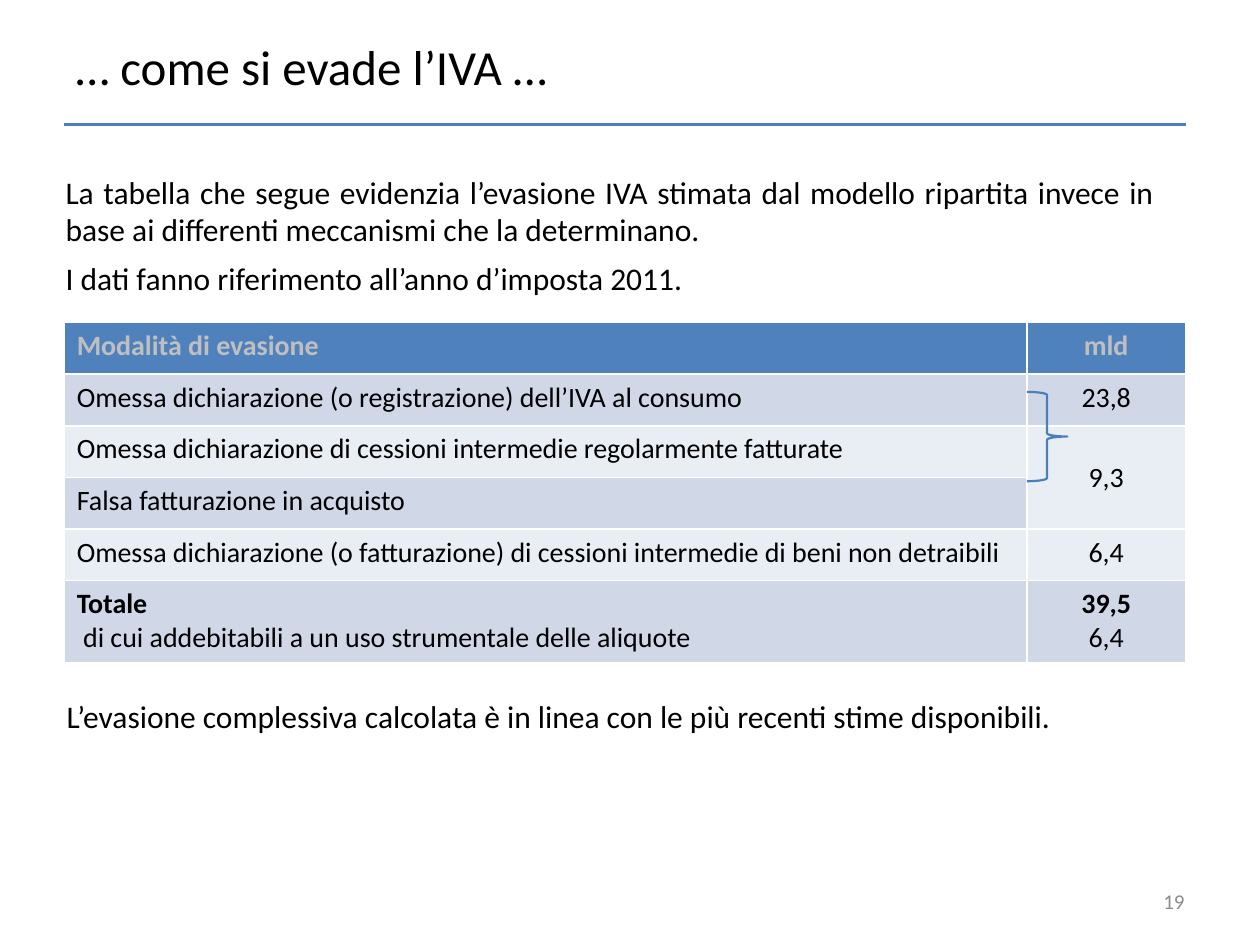
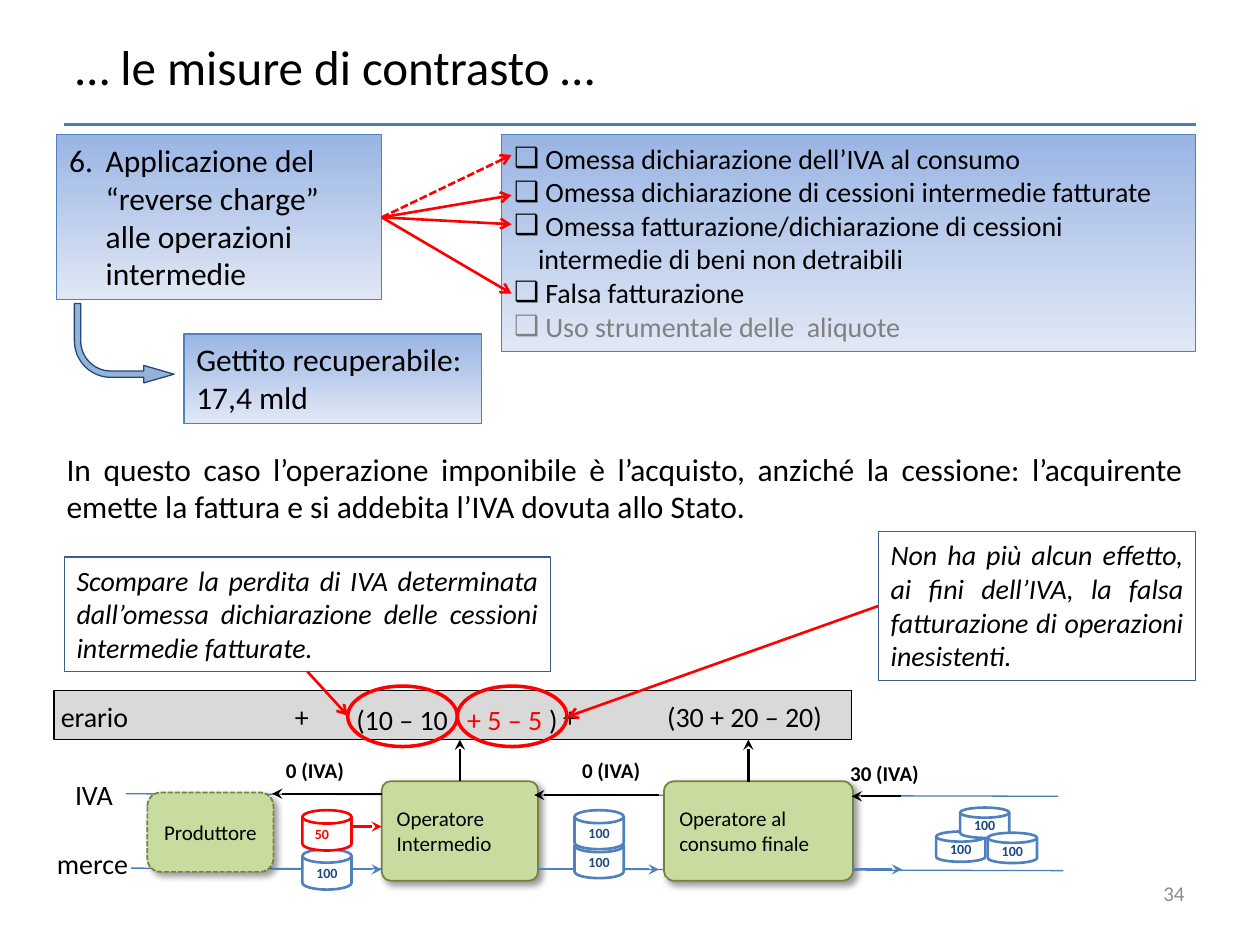
import collections

import pptx
import pptx.dml.color
import pptx.enum.dml
import pptx.enum.shapes
import pptx.enum.text
import pptx.oxml
import pptx.oxml.ns
import pptx.util

RGB = pptx.dml.color.RGBColor
KIND = pptx.enum.shapes.MSO_SHAPE
ALIGN = pptx.enum.text.PP_ALIGN
MID = pptx.enum.text.MSO_ANCHOR.MIDDLE
TOP = pptx.enum.text.MSO_ANCHOR.TOP
DASH = pptx.enum.dml.MSO_LINE.SQUARE_DOT
pt = pptx.util.Pt
qn = pptx.oxml.ns.qn

FONT = "Calibri"
BLACK = RGB(0, 0, 0)
WHITE = RGB(255, 255, 255)
RED = RGB(255, 0, 0)
GRAY = RGB(0x80, 0x80, 0x80)
PAGE = RGB(0x8C, 0x8C, 0x8C)
SILVER = RGB(0xBF, 0xBF, 0xBF)
STEEL = RGB(0xD9, 0xD9, 0xD9)
RULE = RGB(0x4B, 0x7E, 0xBC)
BLUE = RGB(0x4F, 0x81, 0xBD)
NAVY = RGB(0x1F, 0x49, 0x7D)
EDGE = RGB(0x3A, 0x5F, 0x8C)
ARROW = RGB(0x95, 0xB3, 0xD7)
SKY = RGB(0x9A, 0xB5, 0xE4)
MIST = RGB(0xE1, 0xE8, 0xF5)
DARK = RGB(0xD0, 0xD8, 0xE8)
LIGHT = RGB(0xE9, 0xED, 0xF4)
LEAF = RGB(0xC8, 0xDC, 0xA0)
MOSS = RGB(0x73, 0x82, 0x3C)

# The slide is a grid of 100 columns and 75 rows
COLS, ROWS = 100, 75
Box = collections.namedtuple("Box", "x y w h")


def unit(n):
    return pptx.util.Inches(n / 10)


def sub(box, x, y, w, h):
    """Box w by h whose corner lies x, y from the corner of box."""
    return Box(box.x + x, box.y + y, w, h)


def place(shape, box):
    shape.left, shape.top, shape.width, shape.height = map(unit, box)


def write(frame, text, size=16, color=BLACK, bold=False, italic=False, align=ALIGN.LEFT,
          anchor=TOP, before=0, hang=0, bullet=None, wrap=True, pad=None):
    """Fill a frame; a line is a string or a (string, colour or bold) pair."""
    frame.word_wrap = wrap
    frame.auto_size = pptx.enum.text.MSO_AUTO_SIZE.NONE
    frame.vertical_anchor = anchor
    if pad is not None:
        frame.margin_left = frame.margin_right = pad
        frame.margin_top = frame.margin_bottom = pad
    for i, line in enumerate([text] if isinstance(text, str) else text):
        words, own = (line, {}) if isinstance(line, str) else line
        para = frame.add_paragraph() if i else frame.paragraphs[0]
        para.alignment = align
        para.space_before = pt(before if i else 0)
        props = para._p.get_or_add_pPr()
        props.set("marL", str(unit(hang)))
        props.set("indent", str(-unit(hang)))
        mark = pptx.oxml.parse_xml(
            '<a:%s xmlns:a="http://schemas.openxmlformats.org/drawingml/2006/main"/>'
            % ("buChar" if bullet else "buNone"))
        if bullet:
            mark.set("char", bullet)
        props.append(mark)
        run = para.add_run()
        run.text = words
        run.font.name, run.font.size = FONT, pt(size)
        run.font.bold, run.font.italic = own.get("bold", bold), italic
        run.font.color.rgb = own.get("color", color)


def label(slide, box, text, **form):
    shape = slide.shapes.add_textbox(*map(unit, box))
    write(shape.text_frame, text, **form)


def paint(shape, fill=None, edge=None, width=0.75, dash=None):
    if fill == SKY:
        shape.fill.gradient()
        shape.fill.gradient_angle = 270
        for stop, tone in zip(shape.fill.gradient_stops, (SKY, MIST)):
            stop.color.rgb = tone
    elif fill is None:
        shape.fill.background()
    else:
        shape.fill.solid()
        shape.fill.fore_color.rgb = fill
    shape.line.color.rgb = edge
    shape.line.width = pt(width)
    if dash:
        shape.line.dash_style = dash
    shape.shadow.inherit = False


def block(slide, kind, box, text=None, fill=None, edge=None, width=0.75, dash=None, **form):
    shape = slide.shapes.add_shape(kind, *map(unit, box))
    paint(shape, fill, edge, width, dash)
    if text:
        write(shape.text_frame, text, **form)
    return shape


def line(slide, box, x1, y1, x2, y2, color=RULE, width=1.25, tip=None, dash=None, join=None):
    """Straight line inside box; join is the (shape, side) it starts from."""
    ends = (box.x + x1, box.y + y1, box.x + x2, box.y + y2)
    link = slide.shapes.add_connector(pptx.enum.shapes.MSO_CONNECTOR.STRAIGHT, *map(unit, ends))
    link.line.color.rgb = color
    link.line.width = pt(width)
    if dash:
        link.line.dash_style = dash
    props = link.element.spPr
    if tip:
        pptx.oxml.ns  # arrowhead at the far end
        end = props.find(qn("a:ln")).makeelement(qn("a:tailEnd"), {"type": tip})
        props.find(qn("a:ln")).append(end)
    props.append(props.makeelement(qn("a:effectLst"), {}))
    if join:
        link.begin_connect(*join)


def shade(shape):
    """Soft shadow to the lower right."""
    glow = shape.element.spPr.find(qn("a:effectLst"))
    cast = glow.makeelement(qn("a:outerShdw"), {
        "blurRad": str(pt(4)), "dist": str(pt(3)), "dir": "2700000"})
    tone = cast.makeelement(qn("a:srgbClr"), {"val": str(BLACK)})
    tone.append(tone.makeelement(qn("a:alpha"), {"val": "40000"}))
    cast.append(tone)
    glow.append(cast)


def start(deck, title, page, right, foot):
    """New slide with its title, rule and page number."""
    slide = deck.slides.add_slide(deck.slide_layouts[1])
    place(slide.shapes.title, Box(5, 0.5, 67, 9.4))
    write(slide.shapes.title.text_frame, title, size=28, anchor=MID)
    line(slide, Box(0, 0, COLS, ROWS), 5.1, 9.9, right, 9.9, width=1.5)
    label(slide, Box(71.7, foot, 23.3, 4), page, size=12, color=PAGE,
          align=ALIGN.RIGHT, anchor=MID)
    return slide


def grid(slide, box):
    """Table of evasion methods, with the brace over its two columns."""
    strong = {"bold": True}
    rows = [
        ("Modalità di evasione", "mld"),
        ("Omessa dichiarazione (o registrazione) dell’IVA al consumo", "23,8"),
        ("Omessa dichiarazione di cessioni intermedie regolarmente fatturate", "9,3"),
        ("Falsa fatturazione in acquisto", None),
        ("Omessa dichiarazione (o fatturazione) di cessioni intermedie di beni non detraibili",
         "6,4"),
        ([("Totale", strong), " di cui addebitabili a un uso strumentale delle aliquote"],
         [("39,5", strong), "6,4"]),
    ]
    table = slide.shapes.add_table(len(rows), 2, *map(unit, box)).table
    table.columns[0].width, table.columns[1].width = unit(76.4), unit(box.w - 76.4)
    table.cell(2, 1).merge(table.cell(3, 1))
    for r, row in enumerate(rows):
        table.rows[r].height = unit(6.5 if r == len(rows) - 1 else 4.1)
        for c, text in enumerate(row):
            cell = table.cell(r, c)
            cell.fill.solid()
            cell.fill.fore_color.rgb = DARK if r % 2 else LIGHT if r else BLUE
            if text:
                write(cell.text_frame, text, color=BLACK if r else SILVER, bold=r == 0,
                      align=ALIGN.CENTER if c else ALIGN.LEFT)
    table.cell(2, 1).vertical_anchor = MID
    brace = block(slide, KIND.RIGHT_BRACE, sub(box, 76.4, 5.5, 3.2, 7.1), edge=RULE, width=1.25)
    brace.adjustments[0] = 0.08


def steps(slide, box):
    """Measure, the evasion it fights, and the revenue it brings back."""
    body = slide.placeholders[1]
    place(body, sub(box, 35.3, 0, 55.1, 17.2))
    paint(body, SKY, BLUE)
    write(body.text_frame, [
        " Omessa dichiarazione dell’IVA al consumo",
        " Omessa dichiarazione di cessioni intermedie fatturate",
        " Omessa fatturazione/dichiarazione di cessioni intermedie di beni non detraibili",
        " Falsa fatturazione",
        (" Uso strumentale delle  aliquote", {"color": GRAY}),
    ], hang=1.9, bullet="❑")
    card = dict(fill=SKY, edge=BLUE, size=18)
    step = block(slide, KIND.RECTANGLE, sub(box, 0, 0, 25.8, 13.1),
                 "6.\tApplicazione del “reverse charge” alle operazioni intermedie",
                 hang=2.9, **card)
    block(slide, KIND.RECTANGLE, sub(box, 10.1, 15.8, 23.6, 7.1),
          "Gettito recuperabile: 17,4 mld", **card)
    bend = block(slide, KIND.BENT_ARROW, sub(box, 1.4, 13.4, 7.9, 6.3), fill=ARROW, edge=NAVY)
    bend.element.spPr.find(qn("a:xfrm")).set("flipV", "1")
    for i, share in enumerate((0.08, 0.11, 0.38, 0.46)):
        bend.adjustments[i] = share
    for y, dash in ((1.6, DASH), (4.8, None), (7.1, None), (12.6, None)):
        line(slide, box, 25.8, 6.55, 36.1, y, RED, 1.5, "arrow", dash, join=(step, 3))


def disk(slide, box, x, y, h, text="100", edge=BLUE, ink=NAVY, **form):
    block(slide, KIND.FLOWCHART_MAGNETIC_DISK, sub(box, x, y, 3.9, h), text, fill=WHITE,
          edge=edge, width=1.5, size=8, color=ink, bold=True, anchor=MID, wrap=False, **form)


def firm(slide, box, text, round=None, dash=None, **form):
    shape = block(slide, KIND.ROUNDED_RECTANGLE, box, text, fill=LEAF, edge=MOSS, width=1,
                  dash=dash, size=12, anchor=MID, **form)
    if round:
        shape.adjustments[0] = round
    shade(shape)
    return shape


def chain(slide, box):
    """Flow of goods and tax between the firms and the treasury."""
    mid_text = dict(align=ALIGN.CENTER, wrap=False)
    # Long thin tracks for tax and goods
    line(slide, box, 6.4, 14.9, 80.4, 15.1, width=0.75)
    line(slide, box, 6, 9, 80, 9.2, width=0.75)
    # Firms and treasury band
    inner = firm(slide, sub(box, 26.3, 8, 12.4, 7.9), ["Operatore", "Intermedio"], 0.09)
    firm(slide, sub(box, 48.7, 8, 15, 7.9), ["Operatore al", "consumo finale"], 0.1)
    firm(slide, sub(box, 7.7, 8.9, 10, 6.3), "Produttore", dash=DASH, align=ALIGN.CENTER)
    block(slide, KIND.RECTANGLE, sub(box, 0.3, 0.8, 63.3, 3.9), fill=STEEL, edge=BLACK, width=0)
    # Goods go right, tax goes left and up
    for x1, x2, tip in ((17.6, 20, None), (23.9, 26.3, "stealth"), (38.7, 41.8, None),
                        (45.5, 48.3, "stealth"), (63.6, 67.6, "stealth")):
        line(slide, box, x1, 15, x2, 15, BLUE, tip=tip)
    line(slide, box, 23.9, 11.6, 26.3, 11.6, RED, tip="stealth")
    for x1, x2, y in ((26.3, 17.6, 9), (48.3, 38.4, 9.1), (67.5, 63.6, 9.2)):
        line(slide, box, x1, y, x2, y, BLACK, tip="stealth")
    line(slide, box, 32.5, 8, 32.5, 4.7, BLACK, tip="stealth", join=(inner, 0))
    line(slide, box, 55.4, 8.1, 55.4, 4.7, BLACK, tip="stealth")
    # Stocks of goods
    for x, y, h in ((20, 13.4, 3.2), (70.3, 12, 2.4), (72.2, 10.1, 2.4), (74.4, 12.1, 2.4),
                    (41.6, 12.6, 3.1), (41.6, 10.3, 3.1)):
        disk(slide, box, x, y, h, align=ALIGN.CENTER, pad=0)
    disk(slide, box, 20, 10.3, 3.2, "50", RED, RED)
    # Labels
    for x, y, w, text in ((-0.2, 1, 7.4, "erario"), (0.9, 7.2, 5.1, "IVA"),
                          (-0.5, 12.7, 7.7, "merce"), (18.4, 1, 3.1, "+"),
                          (39.7, 1, 3.1, "+"), (47.6, 1, 15, "(30 + 20 – 20)")):
        label(slide, sub(box, x, y, w, 3.7), text, **mid_text)
    for x, y, w, text in ((14.9, 5.6, 12.2, "0 (IVA)"), (38.4, 5.6, 12.2, "0 (IVA)"),
                          (61.3, 5.9, 9.8, "30 (IVA)")):
        label(slide, sub(box, x, y, w, 3), text, size=12, bold=True, **mid_text)
    # Circled sums
    label(slide, sub(box, 23.3, 1.3, 9, 3.7), "(10 – 10", wrap=False)
    label(slide, sub(box, 32.1, 1.3, 7.5, 3.7), "+ 5 – 5", color=RED, wrap=False)
    label(slide, sub(box, 38.6, 1.3, 2, 3.7), ")", wrap=False)
    for x in (23.6, 32.3):
        block(slide, KIND.OVAL, sub(box, x, 0.45, 8.7, 4.8), edge=RED, width=2)


def notes(slide, box):
    """Two framed remarks, each with an arrow to its circled sum."""
    for part, text, side, x, y in (
            ((1.1, 2.2, 38.6, 9.1), "Scompare la perdita di IVA determinata dall’omessa "
             "dichiarazione delle cessioni intermedie fatturate.", 2, 23.6, 14.8),
            ((65.7, 0.2, 25.2, 11.8), "Non ha più alcun effetto, ai fini dell’IVA, la falsa "
             "fatturazione di operazioni inesistenti.", 1, 41, 14.9)):
        frame = block(slide, KIND.RECTANGLE, sub(box, *part), text, edge=EDGE,
                      italic=True, align=ALIGN.JUSTIFY)
        line(slide, box, 0, 0, x, y, RED, 1.5, "arrow", join=(frame, side))


def main():
    deck = pptx.Presentation()
    deck.slide_width, deck.slide_height = unit(COLS), unit(ROWS)
    prose = dict(size=18, align=ALIGN.JUSTIFY, before=6)

    # How the tax is evaded
    slide = start(deck, "… come si evade l’IVA …", "19", 94.1, 69.5)
    body = slide.placeholders[1]
    place(body, Box(4.2, 13.2, 88.4, 11.5))
    write(body.text_frame, [
        "La tabella che segue evidenzia l’evasione IVA stimata dal modello ripartita invece "
        "in base ai differenti meccanismi che la determinano.",
        "I dati fanno riferimento all’anno d’imposta 2011."], **prose)
    grid(slide, Box(5.1, 25.6, 89, 27))
    label(slide, Box(4.3, 54.8, 88.4, 4),
          "L’evasione complessiva calcolata è in linea con le più recenti stime disponibili.",
          **prose)

    # How it is countered
    slide = start(deck, "… le misure di contrasto …", "34", 94.9, 68.9)
    steps(slide, Box(4.5, 10.7, 90.4, 22.9))
    label(slide, Box(4.3, 35.2, 90.6, 7),
          "In questo caso l’operazione imponibile è l’acquisto, anziché la cessione: "
          "l’acquirente emette la fattura e si addebita l’IVA dovuta allo Stato.", **prose)
    chain(slide, Box(4, 54, 81, 17))
    notes(slide, Box(4, 42, 91, 12))
    deck.save("out.pptx")


if __name__ == "__main__":
    main()
